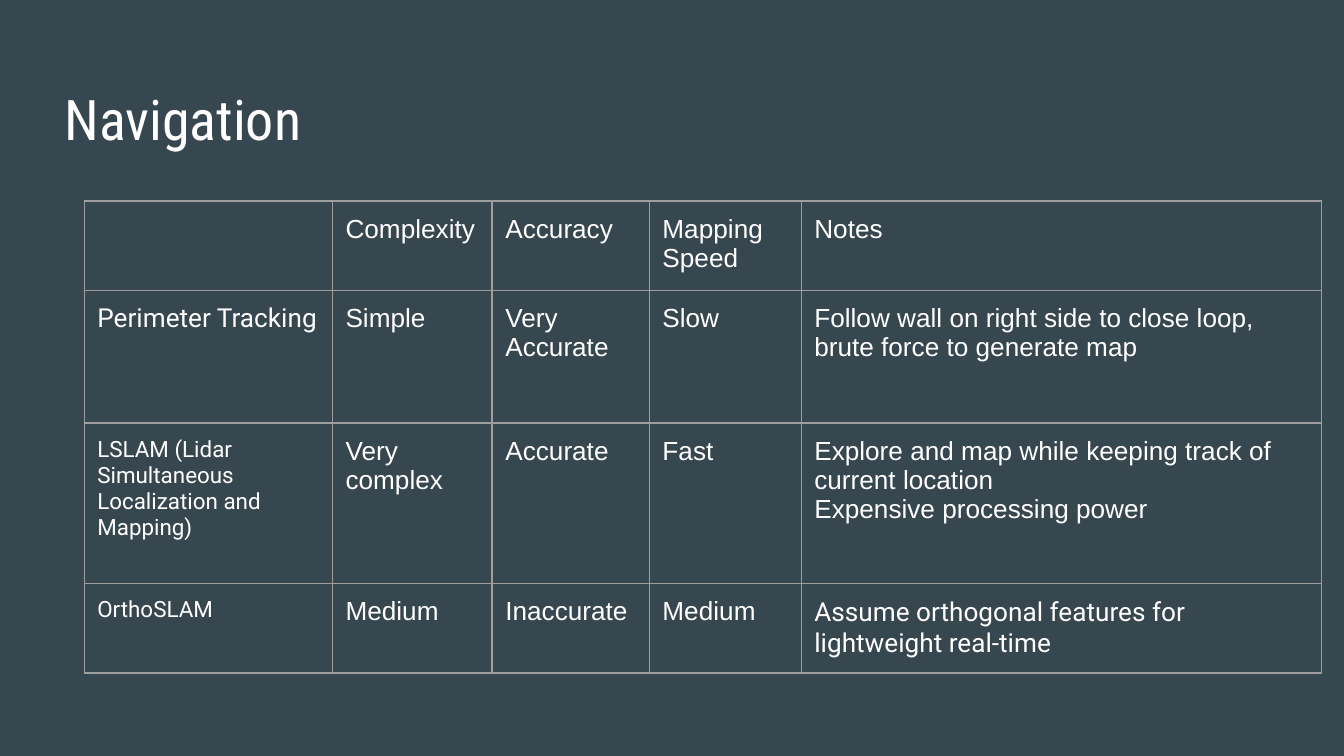
from typing import NamedTuple

from lxml.etree import SubElement
from pptx import Presentation
from pptx.dml.color import RGBColor
from pptx.oxml.ns import qn
from pptx.util import Cm, Pt

WHITE = "FFFFFF"
SLATE = "37474F"
GREY = "9E9E9E"
PAD = Cm(0.25)
WIDTHS = [4.69, 3.02, 2.97, 2.87, 9.83]
HEIGHTS = [1.63, 2.51, 3.04, 1.68]


class Entry(NamedTuple):
    text: str
    font: str = "Arial"
    size: int = 14


ROWS = [
    [Entry(""), Entry("Complexity"), Entry("Accuracy"),
     Entry("Mapping Speed"), Entry("Notes")],
    [Entry("Perimeter Tracking", "Roboto"), Entry("Simple"),
     Entry("Very Accurate"), Entry("Slow"),
     Entry("Follow wall on right side to close loop, "
           "brute force to generate map")],
    [Entry("LSLAM (Lidar Simultaneous Localization and Mapping)", "Roboto", 12),
     Entry("Very complex"), Entry("Accurate"), Entry("Fast"),
     Entry("Explore and map while keeping track of current location\n"
           "Expensive processing power")],
    [Entry("OrthoSLAM", "Roboto", 12), Entry("Medium"), Entry("Inaccurate"),
     Entry("Medium"),
     Entry("Assume orthogonal features for lightweight real-time", "Roboto")],
]


def tint(color) -> RGBColor:
    """Turn a hex string into a colour."""
    return RGBColor.from_string(color)


def write(frame, entry: Entry) -> None:
    """Put an entry's text and font into a text frame."""
    frame.text = entry.text
    for para in frame.paragraphs:
        para.font.name = entry.font
        para.font.size = Pt(entry.size)
        para.font.color.rgb = tint(WHITE)


def pad(box) -> None:
    """Give a cell or text frame equal margins."""
    box.margin_left = box.margin_right = PAD
    box.margin_top = box.margin_bottom = PAD


def edge(cell) -> None:
    """Draw thin grey borders on all sides of a cell."""
    props = cell._tc.get_or_add_tcPr()
    for place, side in enumerate(("lnL", "lnR", "lnT", "lnB")):
        line = props.makeelement(qn(f"a:{side}"), {"w": str(Pt(0.75))})
        fill = SubElement(line, qn("a:solidFill"))
        SubElement(fill, qn("a:srgbClr"), val=GREY)
        props.insert(place, line)


def add_title(slide, entry: Entry) -> None:
    """Add the slide heading."""
    box = slide.shapes.add_textbox(Cm(0.97), Cm(1.35), Cm(23.67), Cm(1.6))
    frame = box.text_frame
    frame.word_wrap = True
    pad(frame)
    write(frame, entry)


def add_grid(slide, rows: list[list[Entry]]) -> None:
    """Add the comparison table."""
    table = slide.shapes.add_table(
        len(rows), len(WIDTHS), Cm(1.59), Cm(3.8),
        Cm(sum(WIDTHS)), Cm(sum(HEIGHTS))).table
    table.first_row = table.horz_banding = False
    for column, width in zip(table.columns, WIDTHS):
        column.width = Cm(width)
    for row, height, entries in zip(table.rows, HEIGHTS, rows):
        row.height = Cm(height)
        for cell, entry in zip(row.cells, entries):
            cell.fill.background()
            pad(cell)
            write(cell.text_frame, entry)
            edge(cell)


def main() -> None:
    """Build and save the slide."""
    deck = Presentation()
    deck.slide_width, deck.slide_height = Cm(25.4), Cm(14.29)
    slide = deck.slides.add_slide(deck.slide_layouts[6])
    slide.background.fill.solid()
    slide.background.fill.fore_color.rgb = tint(SLATE)
    add_title(slide, Entry("Navigation", "Roboto Condensed", 30))
    add_grid(slide, ROWS)
    deck.save("out.pptx")


if __name__ == "__main__":
    main()
